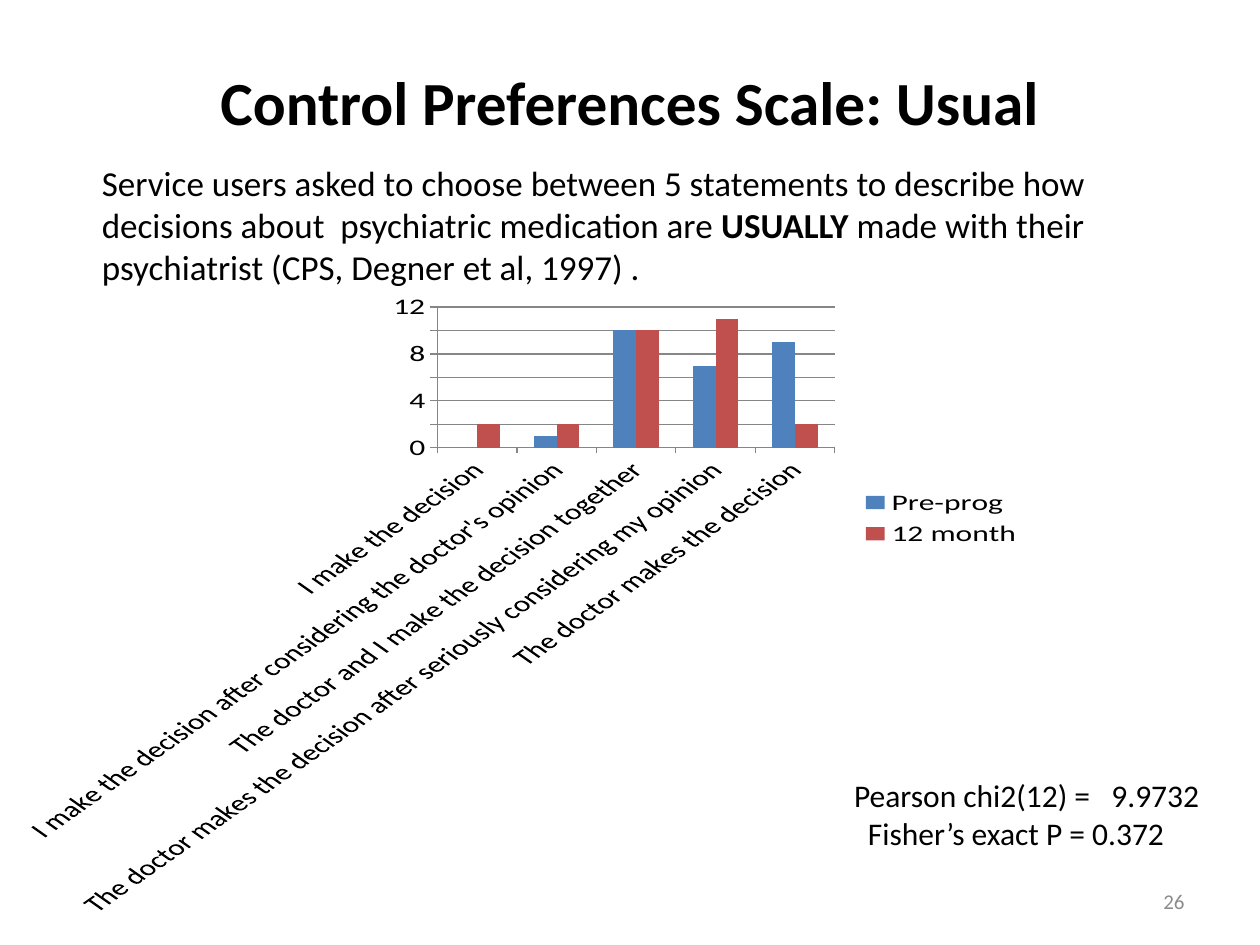
from pptx import Presentation
from pptx.chart.data import CategoryChartData as ChartData
from pptx.dml.color import RGBColor as Rgb
from pptx.enum.chart import XL_CHART_TYPE as Kind, XL_LEGEND_POSITION as Side
from pptx.enum.chart import XL_TICK_MARK as Tick
from pptx.enum.text import MSO_ANCHOR as Anchor, PP_ALIGN as Align
from pptx.util import Inches, Pt

FONT = "Calibri"
COLORS = {"text": "000000", "page": "8C8C8C", "grid": "868686",
          "pre": "4F81BD", "post": "C0504D"}

CATS = [
    "I make the decision",
    "I make the decision after considering the doctor's opinion",
    "The doctor and I make the decision together",
    "The doctor makes the decision after seriously considering my opinion",
    "The doctor makes the decision",
]
SERIES = [
    ("Pre-prog", (0, 1, 10, 7, 9), "pre"),
    ("12 month", (2, 2, 10, 11, 2), "post"),
]


def color(name):
    return Rgb.from_string(COLORS[name])


def set_font(font, size, name="text", bold=False):
    font.name = FONT
    font.size = Pt(size)
    font.bold = bold
    font.color.rgb = color(name)


def add_text(slide, box, paras, size, name="text",
             align=Align.LEFT, anchor=Anchor.TOP):
    """Each paragraph is a list of (text, bold) runs."""
    frame = slide.shapes.add_textbox(*map(Inches, box)).text_frame
    frame.word_wrap = True
    frame.vertical_anchor = anchor
    for i, runs in enumerate(paras):
        para = frame.add_paragraph() if i else frame.paragraphs[0]
        para.alignment = align
        for text, bold in runs:
            run = para.add_run()
            run.text = text
            set_font(run.font, size, name, bold)
    return frame


def style_axis(axis):
    axis.major_tick_mark = Tick.OUTSIDE
    axis.minor_tick_mark = Tick.NONE
    axis.format.line.color.rgb = color("grid")
    set_font(axis.tick_labels.font, 18)


def add_bars(slide, box):
    data = ChartData()
    data.categories = CATS
    for name, vals, _ in SERIES:
        data.add_series(name, vals)
    chart = slide.shapes.add_chart(
        Kind.COLUMN_CLUSTERED, *map(Inches, box), data).chart
    chart.has_title = False
    set_font(chart.font, 18)

    # Columns
    plot = chart.plots[0]
    plot.gap_width = 150
    plot.vary_by_categories = False
    for bars, (_, _, key) in zip(plot.series, SERIES):
        bars.format.fill.solid()
        bars.format.fill.fore_color.rgb = color(key)

    # Axes, with slanted category labels
    cat, val = chart.category_axis, chart.value_axis
    style_axis(cat)
    style_axis(val)
    cat.tick_labels.font  # creates the label properties
    body = cat._element.txPr.bodyPr
    body.set("rot", "-2700000")
    body.set("vert", "horz")
    val.minimum_scale, val.maximum_scale, val.major_unit = 0, 12, 2
    val.has_major_gridlines = True
    val.major_gridlines.format.line.color.rgb = color("grid")

    # Legend
    chart.has_legend = True
    chart.legend.position = Side.RIGHT
    chart.legend.include_in_layout = False
    set_font(chart.legend.font, 18)


def main():
    deck = Presentation()
    deck.slide_width, deck.slide_height = Inches(10), Inches(7.5)
    slide = deck.slides.add_slide(deck.slide_layouts[6])

    # Title
    add_text(slide, (0.5, 0.3, 9, 1.01),
             [[("Control Preferences Scale: Usual", True)]], 35,
             align=Align.CENTER, anchor=Anchor.MIDDLE)

    # Chart of answers
    add_bars(slide, (0.01, 2.33, 8.22, 4.95))

    # Question
    add_text(slide, (0.71, 1.23, 8.66, 1.11), [[
        ("Service users asked to choose between 5 statements to describe how "
         "decisions about  psychiatric medication are ", False),
        ("USUALLY ", True),
        ("made with their psychiatrist (CPS, Degner et al, 1997) .", False),
    ]], 20)

    # Test results, the second line slightly indented
    stats = add_text(slide, (6.68, 6.11, 2.99, 0.71), [
        [("Pearson chi2(12) =   9.9732", False)],
        [("Fisher’s exact P = 0.372", False)],
    ], 18)
    props = stats.paragraphs[1]._p.get_or_add_pPr()
    props.set("marL", str(Inches(0.11)))

    # Page number
    add_text(slide, (7.17, 6.95, 2.33, 0.4), [[("26", False)]], 12, "page",
             Align.RIGHT, Anchor.MIDDLE)

    deck.save("out.pptx")


if __name__ == "__main__":
    main()
